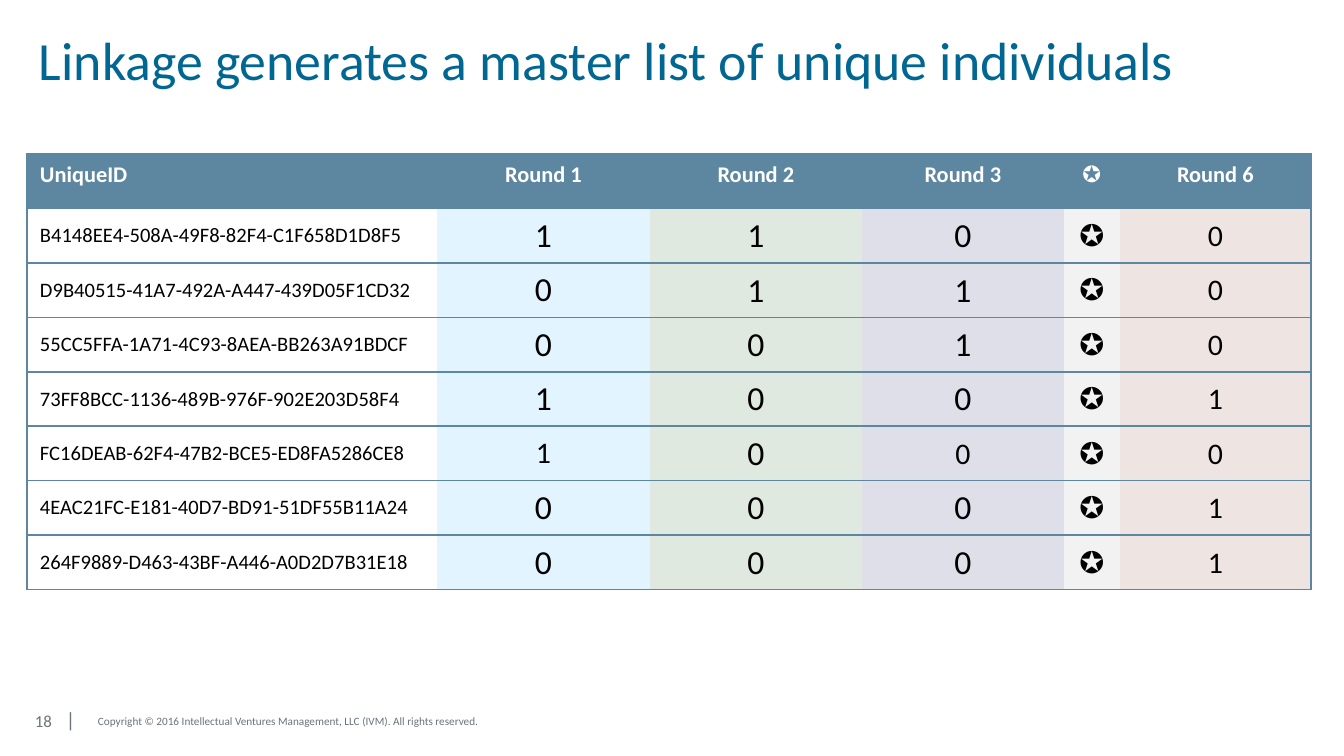
from lxml.etree import SubElement
from pptx import Presentation
from pptx.dml.color import RGBColor
from pptx.enum.text import MSO_ANCHOR as Anchor, PP_ALIGN as Align
from pptx.oxml import parse_xml
from pptx.oxml.ns import nsdecls, qn
from pptx.util import Pt

# Content
TITLE = "Linkage generates a master list of unique individuals"
PAGE_NUMBER = "18"
COPYRIGHT = "Copyright © 2016 Intellectual Ventures Management, LLC (IVM). All rights reserved."
STAR = "✪"
HEADER = ["UniqueID", "Round 1", "Round 2", "Round 3", STAR, "Round 6"]
PEOPLE = [
    ("B4148EE4-508A-49F8-82F4-C1F658D1D8F5", "1", "1", "0", STAR, "0"),
    ("D9B40515-41A7-492A-A447-439D05F1CD32", "0", "1", "1", STAR, "0"),
    ("55CC5FFA-1A71-4C93-8AEA-BB263A91BDCF", "0", "0", "1", STAR, "0"),
    ("73FF8BCC-1136-489B-976F-902E203D58F4", "1", "0", "0", STAR, "1"),
    ("FC16DEAB-62F4-47B2-BCE5-ED8FA5286CE8", "1", "0", "0", STAR, "0"),
    ("4EAC21FC-E181-40D7-BD91-51DF55B11A24", "0", "0", "0", STAR, "1"),
    ("264F9889-D463-43BF-A446-A0D2D7B31E18", "0", "0", "0", STAR, "1"),
]

# Look
FONT, BLUE, STEEL, GRAY = "Calibri", "006692", "5D87A1", "6A737B"
COLUMN_WIDTHS = [410, 213, 212, 202, 56, 191]
COLUMN_FILLS = ["FFFFFF", "E1F4FF", "DFE9E0", "DFDFE9", "F2F2F2", "EEE5E2"]
COLUMN_SIZES = [11, 18, 18, 18, 16, 16]
SMALLER_CELLS = {(5, 1): 16, (5, 3): 16}
TABLE_HEIGHT = 436


def px(length):
    return round(length * 914400 / 134.4)


def color(hex_code):
    return RGBColor.from_string(hex_code)


def set_all(target, values):
    for name, value in values.items():
        setattr(target, name, value)


def margins(left, top, right, bottom):
    return dict(margin_left=px(left), margin_top=px(top),
                margin_right=px(right), margin_bottom=px(bottom))


def add_span(para, text, size, hex_code, bold=False):
    span = para.add_run()
    span.text = text
    set_all(span.font, dict(name=FONT, size=Pt(size), bold=bold))
    span.font.color.rgb = color(hex_code)


def add_box(page, place, insets, anchor):
    frame = page.shapes.add_textbox(*map(px, place)).text_frame
    set_all(frame, dict(word_wrap=True, vertical_anchor=anchor, **margins(*insets)))
    return frame.paragraphs[0]


def set_borders(cell, sides):
    properties = cell._tc.get_or_add_tcPr()
    for position, side in enumerate("LRTB"):
        fill = (f'<a:solidFill><a:srgbClr val="{STEEL}"/></a:solidFill>'
                if side in sides else "<a:noFill/>")
        line = f'<a:ln{side} {nsdecls("a")} w="{Pt(1)}">{fill}</a:ln{side}>'
        properties.insert(position, parse_xml(line))


def add_people_table(page):
    rows = [HEADER, *PEOPLE]
    last = len(HEADER) - 1
    table = page.shapes.add_table(
        len(rows), len(HEADER), px(27), px(154), px(sum(COLUMN_WIDTHS)), px(TABLE_HEIGHT)).table
    set_all(table, dict(first_row=False, horz_banding=False))
    for column, width in zip(table.columns, COLUMN_WIDTHS):
        column.width = px(width)
    for r, values in enumerate(rows):
        table.rows[r].height = px(TABLE_HEIGHT / len(rows))
        for c, value in enumerate(values):
            cell, is_header = table.cell(r, c), r == 0
            tight = not is_header and c > 1
            insets = (1, 1, 1, 0) if tight else (13, 7, 13, 7)
            anchor = Anchor.TOP if is_header else Anchor.MIDDLE
            set_all(cell, dict(vertical_anchor=anchor, **margins(*insets)))
            cell.fill.solid()
            cell.fill.fore_color.rgb = color(STEEL if is_header else COLUMN_FILLS[c])
            set_borders(cell, "TB" + ("L" if c == 0 else "") + ("R" if c == last else ""))
            para = cell.text_frame.paragraphs[0]
            para.alignment = Align.LEFT if c == 0 else Align.CENTER
            if is_header:
                add_span(para, value, 12, "FFFFFF", bold=True)
            else:
                add_span(para, value, SMALLER_CELLS.get((r, c), COLUMN_SIZES[c]), "000000")


deck = Presentation()
set_all(deck, dict(slide_width=px(1344), slide_height=px(756)))
page = deck.slides.add_slide(deck.slide_layouts[6])

# Footer: page number, divider at a tab stop, copyright line
para = add_box(page, (27, 692, 74, 55), (8, 4, 8, 4), Anchor.MIDDLE)
tabs = SubElement(para._p.get_or_add_pPr(), qn("a:tabLst"))
SubElement(tabs, qn("a:tab"), pos=str(px(31)), algn="l")
add_span(para, PAGE_NUMBER + "\t", 9, GRAY)
add_span(para, "|", 11, GRAY)
para = add_box(page, (90, 701, 426, 40), (8, 4, 8, 4), Anchor.MIDDLE)
add_span(para, COPYRIGHT, 6, GRAY)

# Title
para = add_box(page, (27, 21, 1284, 90), (12, 6, 12, 6), Anchor.TOP)
add_span(para, TITLE, 28.8, BLUE)

# Table
add_people_table(page)

deck.save("out.pptx")
